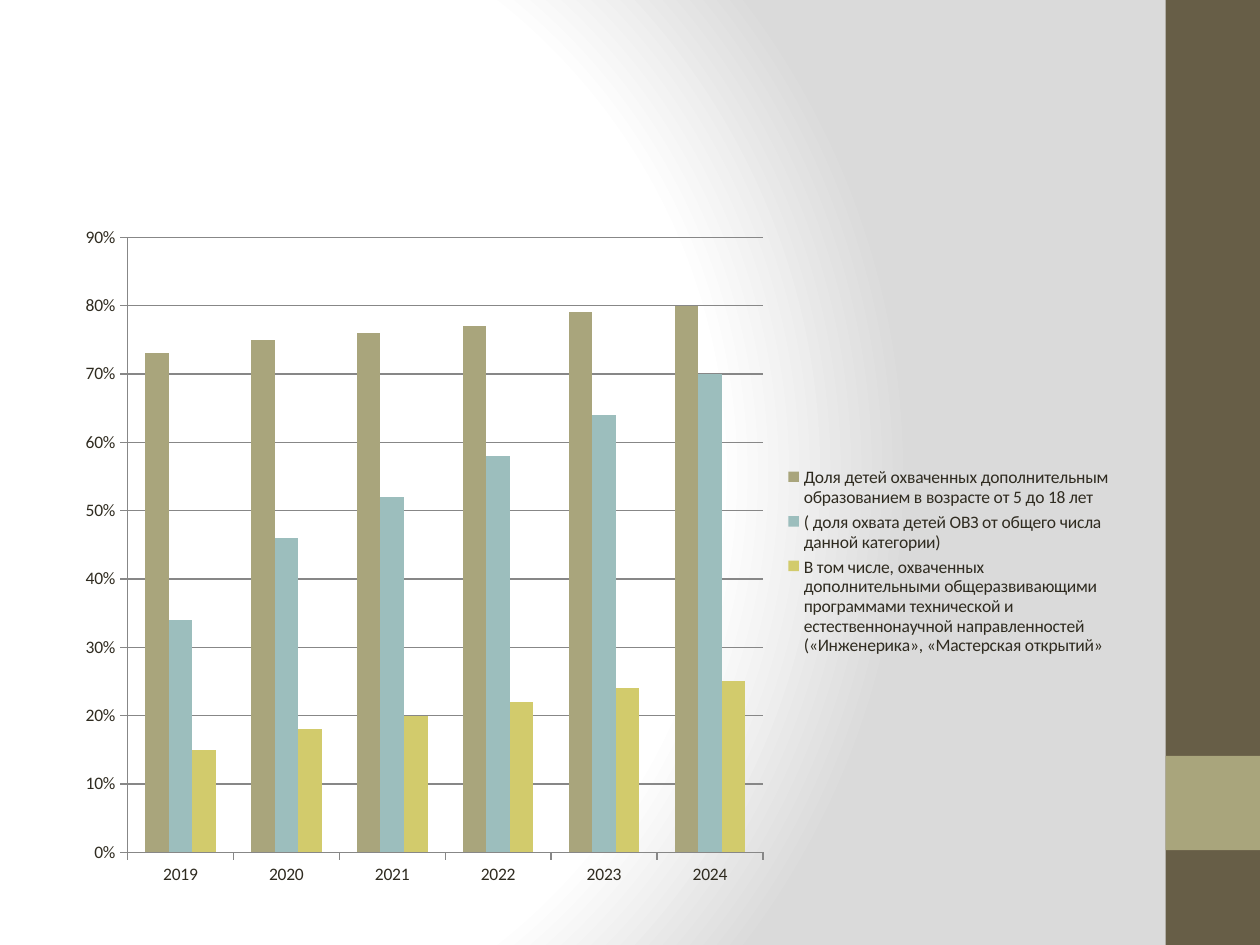
from lxml.etree import SubElement
from pptx import Presentation
from pptx.chart.data import CategoryChartData
from pptx.dml.color import RGBColor
from pptx.enum.chart import XL_CHART_TYPE, XL_LEGEND_POSITION, XL_TICK_MARK
from pptx.enum.shapes import MSO_SHAPE
from pptx.oxml import parse_xml
from pptx.oxml.ns import nsdecls, qn
from pptx.util import Cm, Pt

COLORS = {
    "white": "FFFFFF", "grey": "DADADA", "brown": "675E47", "olive": "A9A57C",
    "teal": "9CBEBD", "yellow": "D2CB6C", "text": "2F2B20", "line": "878787",
}
YEARS = ["2019", "2020", "2021", "2022", "2023", "2024"]
SERIES = [
    ("Доля детей охваченных дополнительным образованием в возрасте от 5 до 18 лет",
     [0.73, 0.75, 0.76, 0.77, 0.79, 0.8], "olive"),
    ("( доля охвата детей ОВЗ от общего числа данной категории)",
     [0.34, 0.46, 0.52, 0.58, 0.64, 0.7], "teal"),
    ("В том числе, охваченных дополнительными общеразвивающими программами "
     "технической и естественнонаучной направленностей "
     "(«Инженерика», «Мастерская открытий»",
     [0.15, 0.18, 0.2, 0.22, 0.24, 0.25], "yellow"),
]


class Deck:
    font = "Calibri"
    size = Pt(10)

    def __init__(self, width, height):
        self.prs = Presentation()
        self.prs.slide_width, self.prs.slide_height = Cm(width), Cm(height)
        self.s = self.prs.slides.add_slide(self.prs.slide_layouts[6])

    def color(self, name):
        return RGBColor.from_string(COLORS[name])

    def background(self, stops, focus):
        fill = self.s.background.fill
        fill.gradient()
        old = self.s.background._cSld.find(".//" + qn("a:gradFill"))
        gs = "".join(
            f'<a:gs pos="{pos * 1000}"><a:srgbClr val="{COLORS[name]}"/></a:gs>'
            for pos, name in stops)
        rect = " ".join(f'{side}="{v * 1000}"' for side, v in zip("ltrb", focus))
        new = parse_xml(
            f'<a:gradFill {nsdecls("a")} rotWithShape="1"><a:gsLst>{gs}</a:gsLst>'
            f'<a:path path="circle"><a:fillToRect {rect}/></a:path></a:gradFill>')
        old.getparent().replace(old, new)

    def rect(self, x, y, w, h, fill):
        sp = self.s.shapes.add_shape(MSO_SHAPE.RECTANGLE, Cm(x), Cm(y), Cm(w), Cm(h))
        sp.shadow.inherit = False
        sp.fill.solid()
        sp.fill.fore_color.rgb = self.color(fill)
        sp.line.fill.background()

    def line(self, fmt):
        fmt.line.color.rgb = self.color("line")
        fmt.line.width = Pt(0.75)

    def layout(self, element, after, inner=False, **box):
        old = element.find(qn("c:layout"))
        if old is not None:
            element.remove(old)
        layout = parse_xml(f'<c:layout {nsdecls("c")}><c:manualLayout/></c:layout>')
        settings = {"layoutTarget": "inner"} if inner else {}
        settings |= {"xMode": "edge", "yMode": "edge", **box}
        for tag, value in settings.items():
            SubElement(layout[0], qn(f"c:{tag}")).set("val", str(value))
        if after is None:
            element.insert(0, layout)
        else:
            element.find(qn(after)).addnext(layout)

    def column_chart(self, x, y, w, h, cats, series):
        data = CategoryChartData(number_format="0%")
        data.categories = cats
        for name, values, _ in series:
            data.add_series(name, values)
        chart = self.s.shapes.add_chart(
            XL_CHART_TYPE.COLUMN_CLUSTERED, Cm(x), Cm(y), Cm(w), Cm(h), data).chart
        chart.has_title = False
        chart.font.name, chart.font.size = self.font, self.size
        chart.font.color.rgb = self.color("text")
        plot = chart.plots[0]
        plot.vary_by_categories = False
        plot.gap_width, plot.overlap = 150, 0
        for ser, (_, _, fill) in zip(plot.series, series):
            ser.format.fill.solid()
            ser.format.fill.fore_color.rgb = self.color(fill)
        for axis in (chart.category_axis, chart.value_axis):
            axis.major_tick_mark = XL_TICK_MARK.OUTSIDE
            axis.minor_tick_mark = XL_TICK_MARK.NONE
            self.line(axis.format)
        axis = chart.value_axis
        axis.minimum_scale, axis.maximum_scale, axis.major_unit = 0, 0.9, 0.1
        axis.tick_labels.number_format = "0%"
        axis.tick_labels.number_format_is_linked = False
        axis.has_major_gridlines = True
        self.line(axis.major_gridlines.format)
        chart.has_legend = True
        chart.legend.position = XL_LEGEND_POSITION.RIGHT
        chart.legend.include_in_layout = False
        area = chart._chartSpace.chart.plotArea
        self.layout(area, None, inner=True, x=0.06, y=0.03, w=0.6, h=0.9)
        self.layout(chart.legend._element, "c:legendPos", x=0.68, y=0.36, w=0.31, h=0.29)


def main():
    deck = Deck(25.4, 19.05)
    deck.background([(0, "white"), (75, "white"), (100, "grey")], (20, 50, 100, 50))
    deck.rect(23.5, 0, 1.9, 19.05, "brown")
    deck.rect(23.5, 15.24, 1.9, 1.9, "olive")
    deck.column_chart(1.29, 4.37, 21.35, 13.78, YEARS, SERIES)
    deck.prs.save("out.pptx")


if __name__ == "__main__":
    main()
